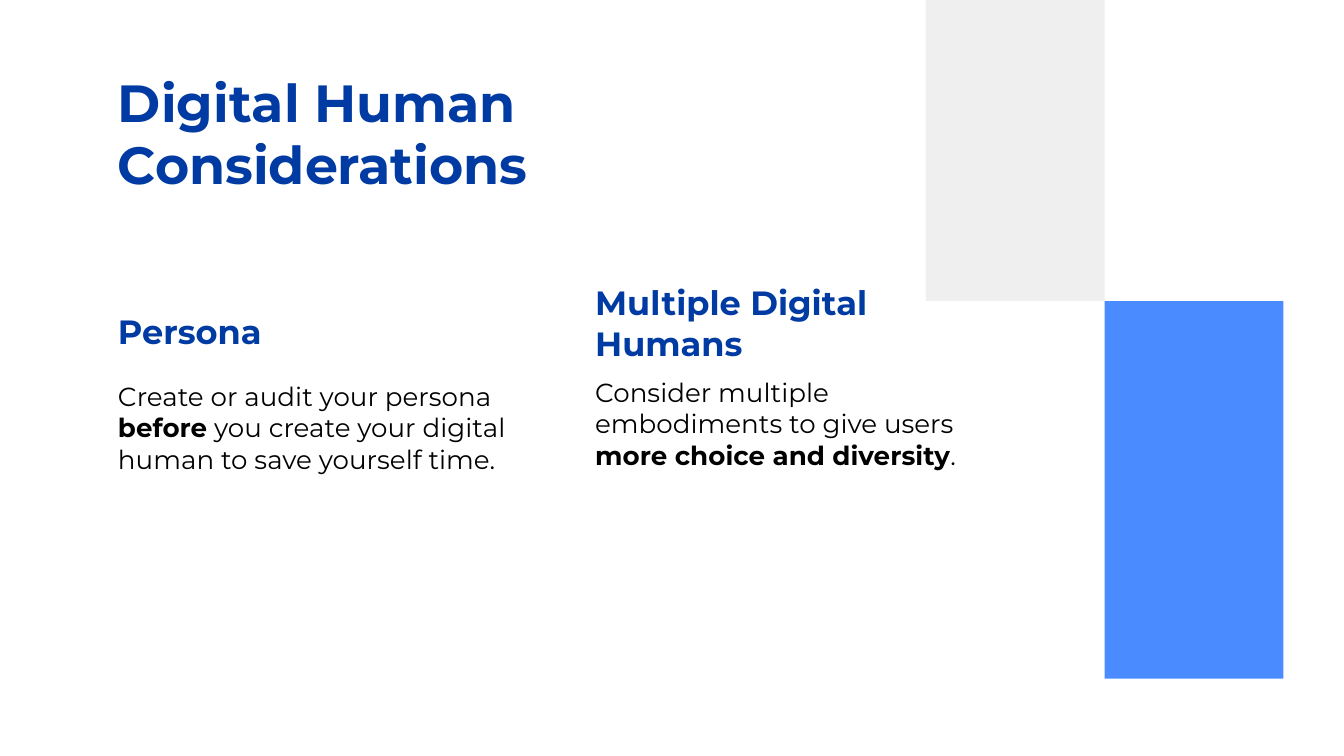
import pptx
import pptx.util
import pptx.dml.color
import pptx.enum.shapes
import pptx.enum.text

Inches = pptx.util.Inches
RGBColor = pptx.dml.color.RGBColor

NAVY = RGBColor(0x00, 0x3B, 0xA3)
BLACK = RGBColor(0x00, 0x00, 0x00)
BLUE = RGBColor(0x4A, 0x8C, 0xFF)
GRAY = RGBColor(0xEF, 0xEF, 0xEF)

LEFT_COLUMN = 0.78
RIGHT_COLUMN = 4.33
COLUMN_WIDTH = 3.27
PANEL_LEFT = 6.89
PANEL_WIDTH = 1.33
PANEL_SPLIT = 2.24


def add_text(page, left, top, width, height, size, color, spans):
    box = page.shapes.add_textbox(Inches(left), Inches(top), Inches(width), Inches(height))
    frame = box.text_frame
    frame.word_wrap = True
    frame.vertical_anchor = pptx.enum.text.MSO_ANCHOR.TOP
    frame.margin_left = frame.margin_right = Inches(0.1)
    frame.margin_top = frame.margin_bottom = Inches(0.1)
    para = frame.paragraphs[0]
    for words, bold in spans:
        span = para.add_run()
        span.text = words
        span.font.name = "Montserrat"
        span.font.size = pptx.util.Pt(size)
        span.font.bold = bold
        span.font.color.rgb = color


deck = pptx.Presentation()
deck.slide_width = Inches(10)
deck.slide_height = Inches(10 * 9 / 16)
page = deck.slides.add_slide(deck.slide_layouts[6])

add_text(page, LEFT_COLUMN, 0.42, 5.34, 0.63, 28, NAVY, [("Digital Human Considerations", True)])

considerations = [
    (LEFT_COLUMN, "Persona", 2.21, 0.51, 2.73, [
        ("Create or audit your persona ", False),
        ("before", True),
        (" you create your digital human to save yourself time.", False),
    ]),
    (RIGHT_COLUMN, "Multiple Digital Humans", 2, 0.69, 2.7, [
        ("Consider multiple embodiments to give users ", False),
        ("more choice and diversity", True),
        (".", False),
    ]),
]
for left, heading, heading_top, heading_height, body_top, body in considerations:
    add_text(page, left, heading_top, COLUMN_WIDTH, heading_height, 18, NAVY, [(heading, True)])
    add_text(page, left, body_top, COLUMN_WIDTH, 1.4, 14, BLACK, body)

panels = [
    (PANEL_LEFT + PANEL_WIDTH, PANEL_SPLIT, 2.81, BLUE),
    (PANEL_LEFT, 0, PANEL_SPLIT, GRAY),
]
for left, top, height, color in panels:
    panel = page.shapes.add_shape(
        pptx.enum.shapes.MSO_SHAPE.RECTANGLE,
        Inches(left), Inches(top), Inches(PANEL_WIDTH), Inches(height),
    )
    panel.shadow.inherit = False
    panel.fill.solid()
    panel.fill.fore_color.rgb = color
    panel.line.fill.background()

deck.save("out.pptx")
